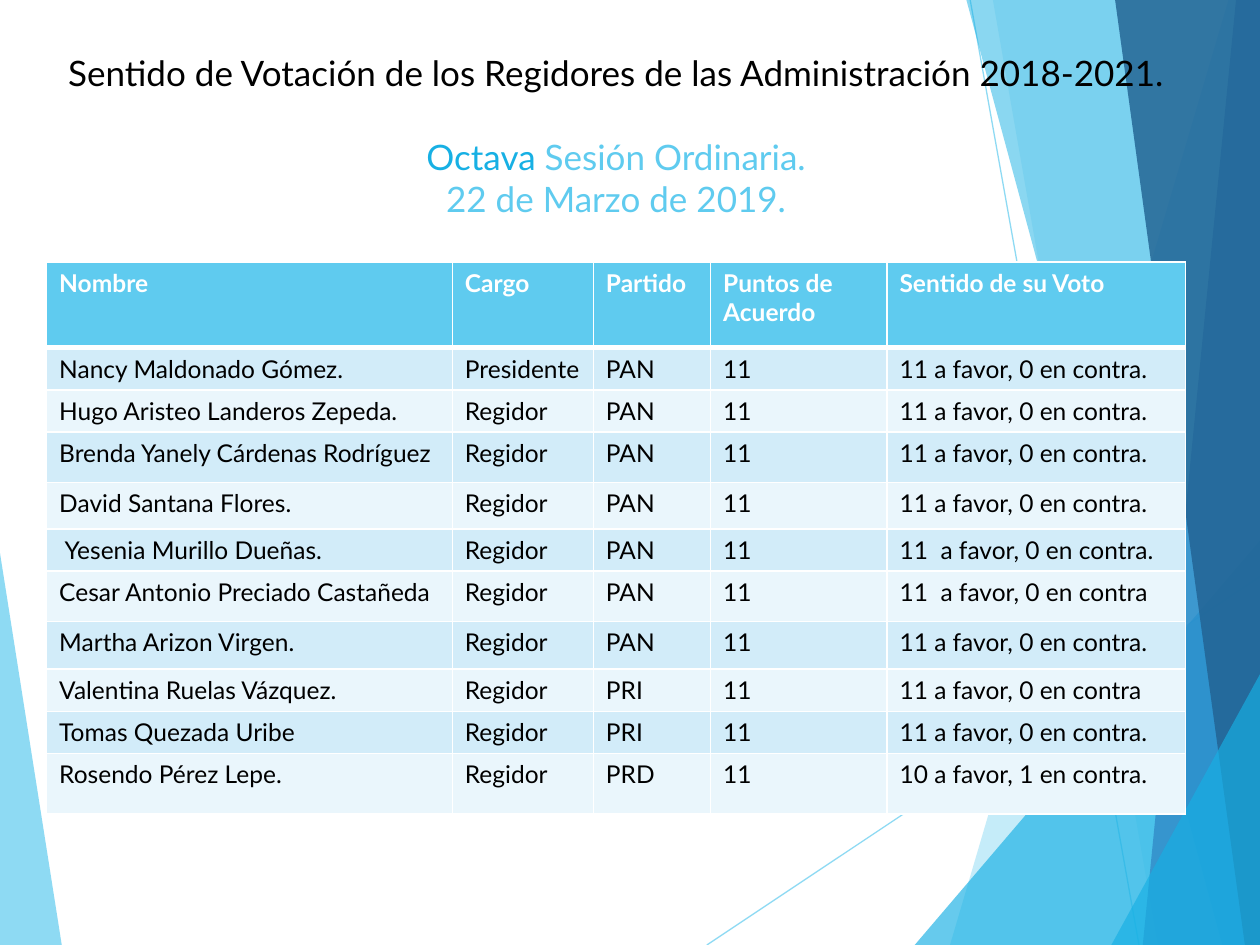
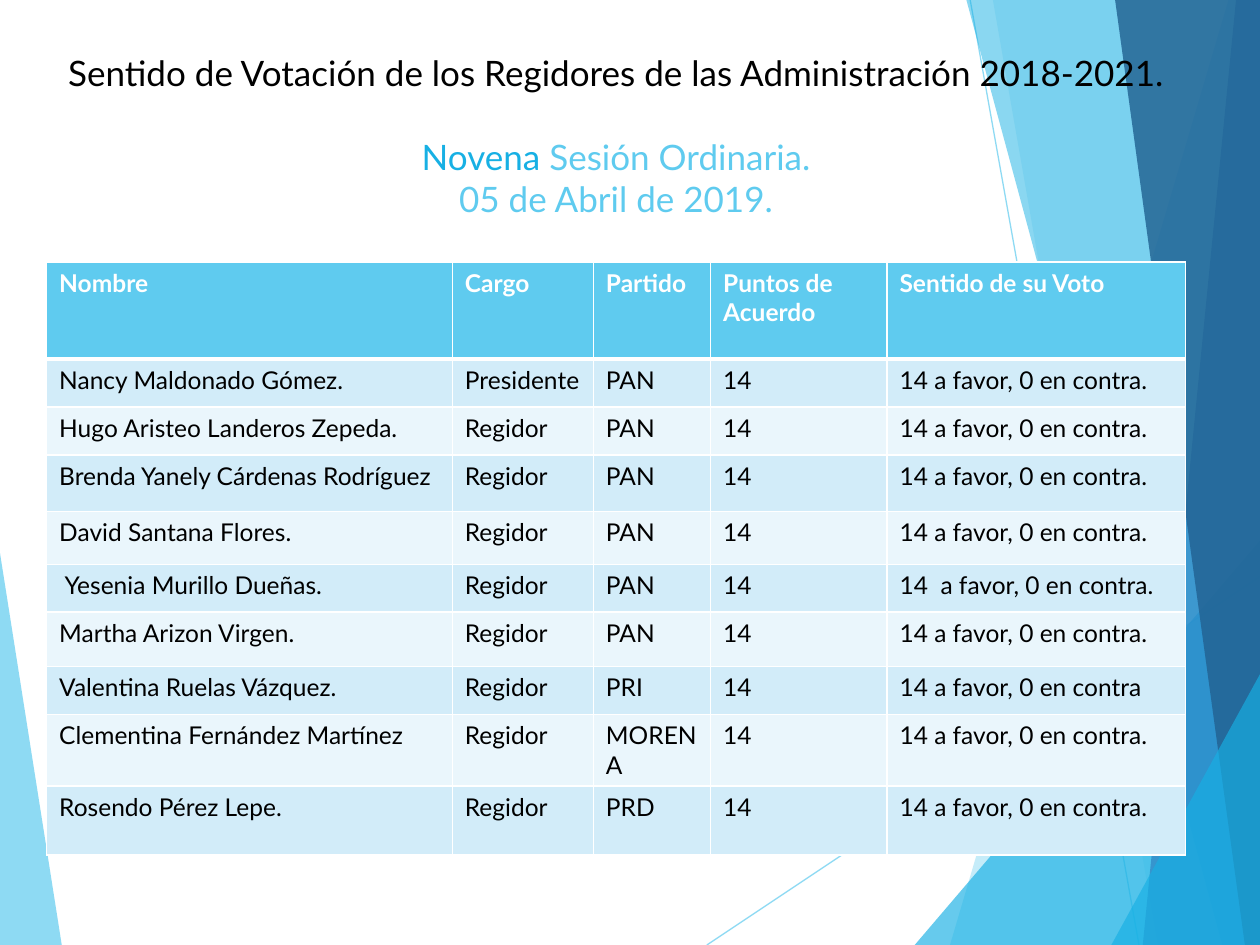
import dataclasses

import lxml.etree
import pptx
import pptx.dml.color
import pptx.enum.shapes
import pptx.enum.text
import pptx.oxml.ns
import pptx.util


@dataclasses.dataclass(frozen=True)
class Theme:
    font: str = "Lato"
    title_size: int = 20
    table_size: int = 14
    black: str = "000000"
    white: str = "FFFFFF"
    sky: str = "5FCBEF"
    cyan: str = "17B0E4"
    blue: str = "2E83C3"
    navy: str = "226292"
    bands: tuple = ("D2ECF9", "EAF6FC")
    hairline: float = 0.75
    border: int = 1
    header_border: int = 3


@dataclasses.dataclass(frozen=True)
class Member:
    name: str
    party: str
    vote: str = "{points} a favor, 0 en contra."


@dataclasses.dataclass(frozen=True)
class Session:
    ordinal: str
    date: str
    points: int
    absent: tuple
    row_heights: tuple
    special_votes: dict


THEME = Theme()
GRID_COLUMNS, GRID_ROWS = 100, 75
CELL = pptx.util.Inches(0.1)
LEFT, TITLE_TOP, TABLE_TOP, CONTENT_WIDTH = 3.7, 3.6, 20.8, 90.4
COLUMN_WIDTHS = (32.2, 11.2, 9.3, 14, 23.7)

TITLE = "Sentido de Votación de los Regidores de las Administración 2018-2021."
HEADERS = ("Nombre", "Cargo", "Partido", "Puntos de Acuerdo", "Sentido de su Voto")
MEMBERS = (
    Member("Nancy Maldonado Gómez.", "PAN"),
    Member("Hugo Aristeo Landeros Zepeda.", "PAN"),
    Member("Brenda Yanely Cárdenas Rodríguez", "PAN"),
    Member("David Santana Flores.", "PAN"),
    Member(" Yesenia Murillo Dueñas.", "PAN", "{points}  a favor, 0 en contra."),
    Member("Cesar Antonio Preciado Castañeda", "PAN", "{points}  a favor, 0 en contra"),
    Member("Martha Arizon Virgen.", "PAN"),
    Member("Valentina Ruelas Vázquez.", "PRI", "{points} a favor, 0 en contra"),
    Member("Tomas Quezada Uribe", "PRI"),
    Member("Clementina Fernández Martínez", "MORENA"),
    Member("Rosendo Pérez Lepe.", "PRD"),
)
SESSIONS = (
    Session(
        "Octava", "22 de Marzo de 2019.", 11,
        ("Clementina Fernández Martínez",),
        (6.8, 3.3, 3.2, 4, 3.7, 3.2, 4, 3.8, 3.2, 3.2, 4.8),
        {"Rosendo Pérez Lepe.": "10 a favor, 1 en contra."},
    ),
    Session(
        "Novena", "05 de Abril de 2019.", 14,
        ("Cesar Antonio Preciado Castañeda", "Tomas Quezada Uribe"),
        (7.7, 3.8, 3.8, 4.5, 4.2, 3.8, 4.3, 3.8, 3.8, 5.5),
        {},
    ),
)

RAYS = (((56.1, 75), (100, 45.75)), ((77, 0), (90.4, 75)))
LEFT_FACET = (((0, 43.9), (4.9, 75), (0, 75)), THEME.sky, 70)


def right_facet(top, bottom, color, opacity):
    corners = [(GRID_COLUMNS, top[1]), (GRID_COLUMNS, GRID_ROWS)]
    outline = [top, *corners, bottom] if top[0] < GRID_COLUMNS else [*corners, bottom]
    return outline, color, opacity


FACETS = (
    right_facet((97.5, 0), (75.4, 75), THEME.sky, 36),
    right_facet((78.8, 0), (91.9, 75), THEME.sky, 20),
    right_facet((100, 42.9), (72.6, 75), THEME.cyan, 66),
    right_facet((76.7, 0), (97, 75), THEME.cyan, 50),
    right_facet((98.1, 0), (90.7, 75), THEME.blue, 70),
    right_facet((88.5, 0), (98.8, 75), THEME.navy, 82),
    right_facet((100, 53.5), (88.2, 75), THEME.cyan, 66),
)


def grid(units):
    return round(units * CELL)


def rgb(color):
    return pptx.dml.color.RGBColor.from_string(color)


def add_xml(parent, tag, **attributes):
    return lxml.etree.SubElement(parent, pptx.oxml.ns.qn(tag), attributes)


def set_opacity(shape, percent):
    for color in shape.element.spPr.iter(pptx.oxml.ns.qn("a:srgbClr")):
        add_xml(color, "a:alpha", val=str(percent * 1000))


def write(paragraph, text, *, size, color, bold=False):
    run = paragraph.add_run()
    run.text = text
    run.font.name = THEME.font
    run.font.size = pptx.util.Pt(size)
    run.font.bold = bold
    run.font.color.rgb = rgb(color)


def add_facet(slide, outline, color, opacity):
    points = [(grid(x), grid(y)) for x, y in outline]
    builder = slide.shapes.build_freeform(*points[0])
    builder.add_line_segments(points[1:], close=True)
    shape = builder.convert_to_shape()
    shape.shadow.inherit = False
    shape.fill.solid()
    shape.fill.fore_color.rgb = rgb(color)
    shape.line.fill.background()
    set_opacity(shape, opacity)


def add_ray(slide, start, end):
    ray = slide.shapes.add_connector(
        pptx.enum.shapes.MSO_CONNECTOR.STRAIGHT, *map(grid, (*start, *end))
    )
    ray.line.color.rgb = rgb(THEME.sky)
    ray.line.width = pptx.util.Pt(THEME.hairline)
    set_opacity(ray, 70)
    add_xml(ray.element.spPr, "a:effectLst")


def add_backdrop(slide):
    add_facet(slide, *LEFT_FACET)
    for start, end in RAYS:
        add_ray(slide, start, end)
    for facet in FACETS:
        add_facet(slide, *facet)


def add_title(slide, session):
    title = slide.shapes.title
    title.left, title.top = grid(LEFT), grid(TITLE_TOP)
    title.width, title.height = grid(CONTENT_WIDTH), grid(TABLE_TOP - TITLE_TOP)
    frame = title.text_frame
    frame.word_wrap = True
    frame.auto_size = pptx.enum.text.MSO_AUTO_SIZE.NONE
    frame.vertical_anchor = pptx.enum.text.MSO_ANCHOR.TOP
    heading, name, date = frame.paragraphs[0], frame.add_paragraph(), frame.add_paragraph()
    for paragraph in (heading, name, date):
        paragraph.alignment = pptx.enum.text.PP_ALIGN.CENTER
        paragraph.line_spacing = 1.0
        paragraph.space_before = pptx.util.Pt(0)
    name.space_before = pptx.util.Pt(THEME.title_size * 1.2)
    write(heading, TITLE, size=THEME.title_size, color=THEME.black)
    write(name, session.ordinal, size=THEME.title_size, color=THEME.cyan)
    write(name, " Sesión Ordinaria.", size=THEME.title_size, color=THEME.sky)
    write(date, session.date, size=THEME.title_size, color=THEME.sky)
    slide.shapes.element.append(title.element)


def set_borders(cell, **widths):
    properties = cell._tc.get_or_add_tcPr()
    for side in "LRTB":
        width = pptx.util.Pt(widths.get(side, THEME.border))
        line = add_xml(properties, f"a:ln{side}", w=str(width))
        add_xml(add_xml(line, "a:solidFill"), "a:srgbClr", val=THEME.white)


def fill_cell(cell, text, row):
    header = row == 0
    if header:
        set_borders(cell, B=THEME.header_border)
    elif row == 1:
        set_borders(cell, T=THEME.header_border)
    else:
        set_borders(cell)
    cell.fill.solid()
    cell.fill.fore_color.rgb = rgb(THEME.sky if header else THEME.bands[(row - 1) % 2])
    write(
        cell.text_frame.paragraphs[0], text, size=THEME.table_size,
        color=THEME.white if header else THEME.black, bold=header,
    )


def vote_rows(session):
    rows = [HEADERS]
    for index, member in enumerate(MEMBERS):
        if member.name in session.absent:
            continue
        post = "Regidor" if index else "Presidente"
        vote = session.special_votes.get(member.name, member.vote)
        rows.append((
            member.name, post, member.party, str(session.points),
            vote.format(points=session.points),
        ))
    return rows


def add_vote_table(slide, session):
    rows = vote_rows(session)
    table = slide.shapes.add_table(
        len(rows), len(HEADERS), grid(LEFT), grid(TABLE_TOP),
        grid(CONTENT_WIDTH), grid(sum(session.row_heights)),
    ).table
    for column, width in zip(table.columns, COLUMN_WIDTHS):
        column.width = grid(width)
    for row, height in zip(table.rows, session.row_heights):
        row.height = grid(height)
    for row_index, texts in enumerate(rows):
        for column_index, text in enumerate(texts):
            fill_cell(table.cell(row_index, column_index), text, row_index)


def main():
    presentation = pptx.Presentation()
    presentation.slide_width = grid(GRID_COLUMNS)
    presentation.slide_height = grid(GRID_ROWS)
    title_only = presentation.slide_layouts.get_by_name("Title Only")
    for session in SESSIONS:
        slide = presentation.slides.add_slide(title_only)
        add_backdrop(slide)
        add_vote_table(slide, session)
        add_title(slide, session)
    presentation.save("out.pptx")


if __name__ == "__main__":
    main()
